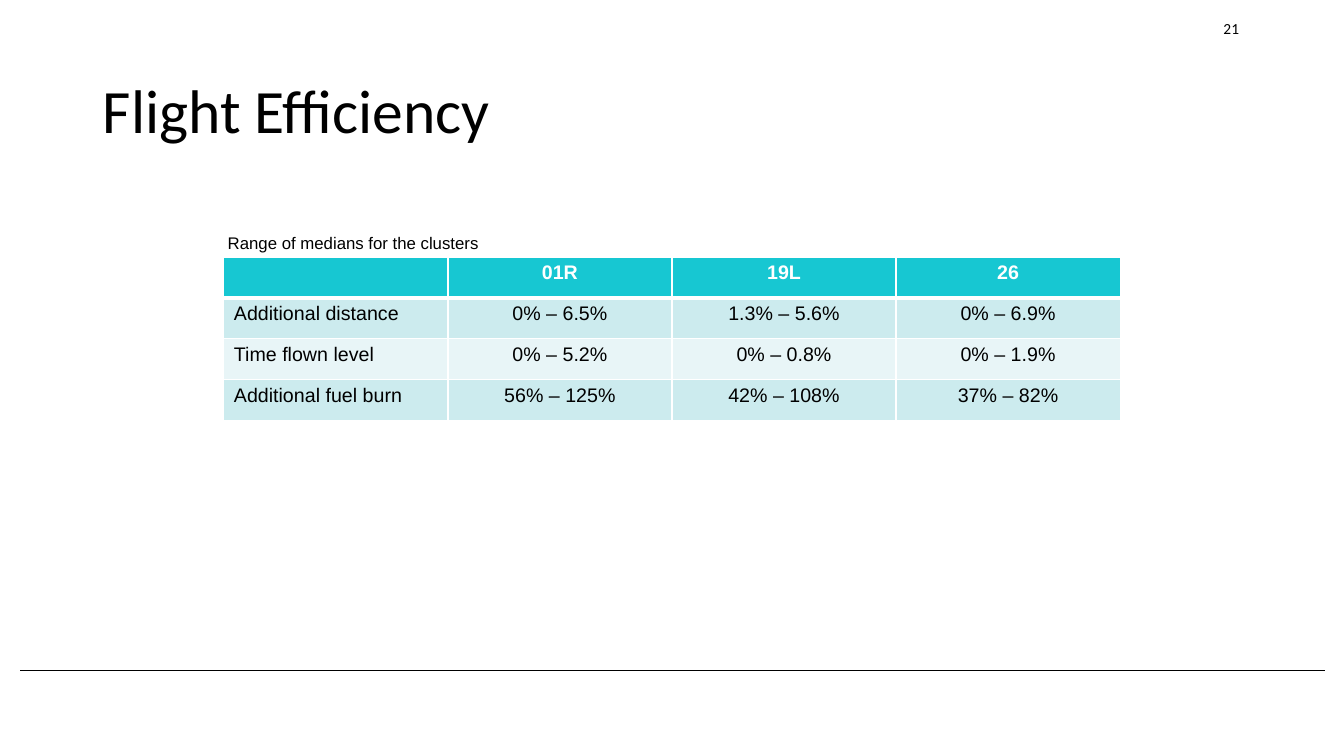
from lxml.etree import SubElement as Sub
from pptx import Presentation
from pptx.dml.color import RGBColor
from pptx.enum.shapes import MSO_CONNECTOR as Line
from pptx.enum.text import MSO_ANCHOR as Anchor, MSO_AUTO_SIZE as Fit, PP_ALIGN as Align
from pptx.oxml.ns import qn
from pptx.util import Inches, Pt

BLACK = RGBColor(0x00, 0x00, 0x00)
WHITE = RGBColor(0xFF, 0xFF, 0xFF)
TEAL = RGBColor(0x17, 0xC7, 0xD2)
PALE = RGBColor(0xCC, 0xEB, 0xEE)
MIST = RGBColor(0xE8, 0xF5, 0xF7)

ROWS = [
    ["", "01R", "19L", "26"],
    ["Additional distance", "0% – 6.5%", "1.3% – 5.6%", "0% – 6.9%"],
    ["Time flown level", "0% – 5.2%", "0% – 0.8%", "0% – 1.9%"],
    ["Additional fuel burn", "56% – 125%", "42% – 108%", "37% – 82%"],
]


def write(frame, text, size, face, color=BLACK, align=Align.LEFT, bold=False):
    para = frame.paragraphs[0]
    para.alignment = align
    run = para.add_run()
    run.text = text
    font = run.font
    font.size, font.name, font.bold = Pt(size), face, bold
    font.color.rgb = color
    return para


def add_title(slide, left, top, width, height):
    title = slide.shapes.title
    title.left, title.top = Inches(left), Inches(top)
    title.width, title.height = Inches(width), Inches(height)
    frame = title.text_frame
    frame.auto_size = Fit.NONE
    frame.vertical_anchor = Anchor.MIDDLE
    write(frame, "Flight Efficiency", 44, "Calibri").line_spacing = 0.9


def add_box(slide, left, top, width, height):
    box = slide.shapes.add_textbox(Inches(left), Inches(top), Inches(width), Inches(height))
    box.text_frame.word_wrap = True
    return box.text_frame


def add_number(slide, left, top, width, height):
    frame = add_box(slide, left, top, width, height)
    frame.margin_left = frame.margin_right = frame.margin_bottom = 0
    frame.margin_top = Inches(0.2)
    write(frame, "21", 11, "Calibri", align=Align.RIGHT)


def add_rule(slide, left, top, width):
    rule = slide.shapes.add_connector(
        Line.STRAIGHT, Inches(left), Inches(top), Inches(left + width), Inches(top))
    rule.line.color.rgb = BLACK
    rule.line.width = Pt(0.75)
    Sub(rule.element.spPr, qn("a:effectLst"))


def add_edges(cell, row):
    props = cell._tc.get_or_add_tcPr()
    heavy = {0: "B", 1: "T"}.get(row)
    for side in "LRTB":
        edge = Sub(props, qn("a:ln" + side), w=str(Pt(3 if side == heavy else 1)))
        fill = Sub(edge, qn("a:solidFill"))
        Sub(fill, qn("a:srgbClr"), val=str(WHITE))


def add_grid(slide, left, top, width, height):
    write(add_box(slide, left - 0.06, top - 0.29, 3.28, 0.3),
          "Range of medians for the clusters", 12, "Arial")
    grid = slide.shapes.add_table(
        len(ROWS), len(ROWS[0]), Inches(left), Inches(top), Inches(width), Inches(height)).table
    for r, row in enumerate(ROWS):
        head = r == 0
        for c, text in enumerate(row):
            cell = grid.cell(r, c)
            add_edges(cell, r)
            cell.fill.solid()
            cell.fill.fore_color.rgb = TEAL if head else PALE if r % 2 else MIST
            if text:
                write(cell.text_frame, text, 14, "Arial", WHITE if head else BLACK,
                      Align.CENTER if c else Align.LEFT, head)


def main():
    deck = Presentation()
    deck.slide_width, deck.slide_height = Inches(13.33), Inches(7.5)
    slide = deck.slides.add_slide(deck.slide_layouts[5])
    add_rule(slide, 0.2, 6.65, 12.94)
    add_title(slide, 0.92, 0.4, 11.5, 1.45)
    add_number(slide, 11.82, 0, 0.47, 0.39)
    add_grid(slide, 2.22, 2.55, 8.89, 1.62)
    deck.save("out.pptx")


if __name__ == "__main__":
    main()
